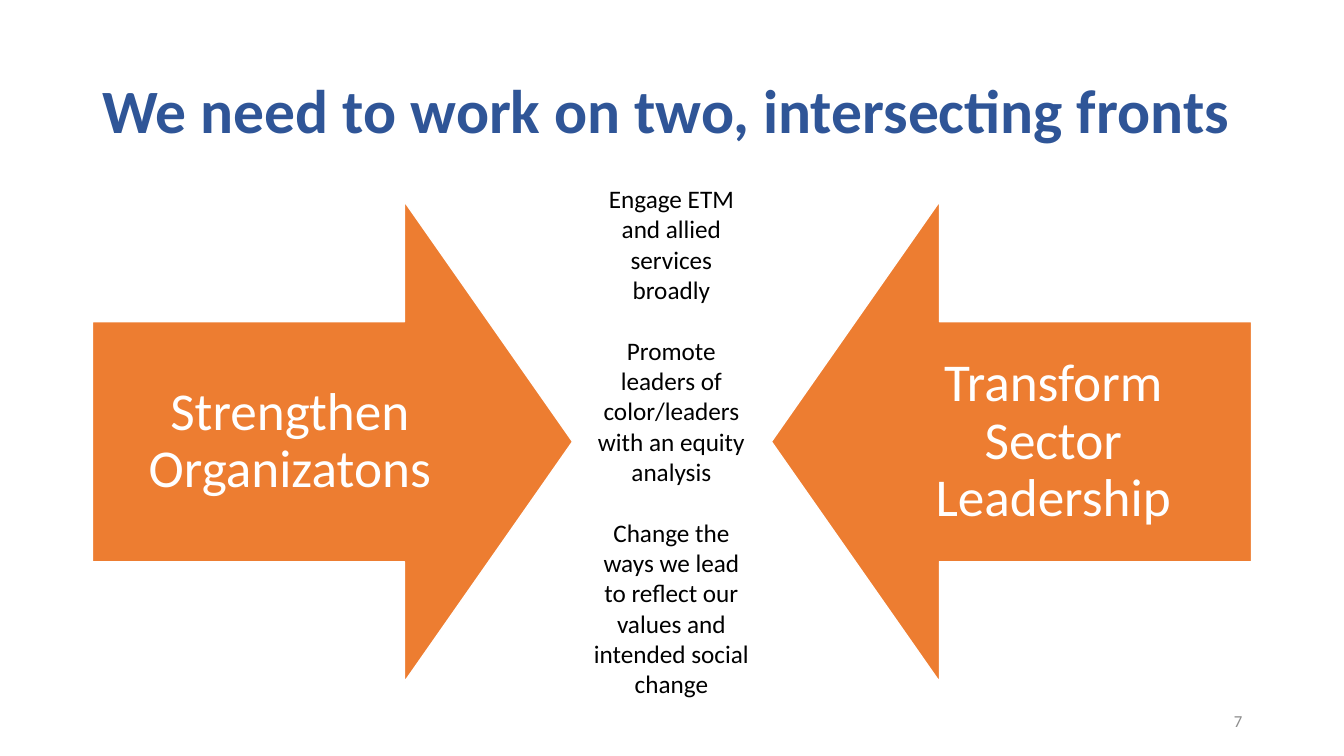
from pptx import Presentation
from pptx.dml.color import RGBColor
from pptx.enum.shapes import MSO_SHAPE as Shape
from pptx.enum.text import MSO_ANCHOR as Anchor, MSO_AUTO_SIZE as AutoSize, PP_ALIGN as Align
from pptx.util import Cm, Pt

FONT = "Calibri"
ARROW_SIDE, ARROW_TOP = 12.1, 5.08
LABEL_TOP, LABEL_WIDTH, LABEL_HEIGHT = 8.11, 9.95, 6.05
GOALS = [
    "Engage ETM and allied services broadly",
    "Promote leaders of color/leaders with an equity analysis",
    "Change the ways we lead to reflect our values and intended social change",
]


def color(value):
    """Turn a hex string into a colour."""
    return RGBColor.from_string(value)


def add_text(s, box, texts, size, fill, align=Align.CENTER, anchor=Anchor.MIDDLE,
             bold=False, spacing=None, gap=0, inset=None):
    """Add a wrapped text box with one paragraph per text."""
    sp = s.shapes.add_textbox(*map(Cm, box))
    tf = sp.text_frame
    tf.word_wrap = True
    tf.vertical_anchor = anchor
    if inset is not None:
        tf.margin_left = tf.margin_right = tf.margin_top = tf.margin_bottom = Cm(inset)
    for i, text in enumerate(texts):
        p = tf.add_paragraph() if i else tf.paragraphs[0]
        p.alignment = align
        if spacing:
            p.line_spacing = spacing
        if i:
            p.space_before = Pt(gap)
        r = p.add_run()
        r.text = text
        r.font.name, r.font.size, r.font.bold = FONT, Pt(size), bold
        r.font.color.rgb = color(fill)
    return sp


def add_front(s, arrow_left, label_left, rotation, text):
    """Add a large sideways arrow and its label."""
    sp = s.shapes.add_shape(Shape.DOWN_ARROW, Cm(arrow_left), Cm(ARROW_TOP),
                            Cm(ARROW_SIDE), Cm(ARROW_SIDE))
    sp.rotation = rotation
    sp.adjustments[0], sp.adjustments[1] = 0.5, 0.35
    sp.shadow.inherit = False
    sp.fill.solid()
    sp.fill.fore_color.rgb = color("ED7D31")
    sp.line.color.rgb = color("FFFFFF")
    sp.line.width = Pt(1)
    add_text(s, (label_left, LABEL_TOP, LABEL_WIDTH, LABEL_HEIGHT), [text], 38, "FFFFFF",
             spacing=0.9, inset=0.76)


def main():
    """Build the slide and save it."""
    prs = Presentation()
    prs.slide_width, prs.slide_height = Cm(33.87), Cm(19.05)
    s = prs.slides.add_slide(prs.slide_layouts[6])
    add_text(s, (2.33, 1.01, 29.21, 3.68), ["We need to work on two, intersecting fronts"],
             44, "2F5597", align=Align.LEFT, bold=True, spacing=0.9)
    add_text(s, (23.94, 17.66, 7.62, 1.01), ["7"], 12, "8C8C8C", align=Align.RIGHT)
    add_front(s, 2.33, 2.33, 270, "Strengthen Organizatons")
    add_front(s, 19.44, 21.57, 90, "Transform Sector Leadership")
    goals = add_text(s, (14.69, 4.5, 4.46, 13.43), GOALS, 18, "000000",
                     anchor=Anchor.TOP, gap=22)
    goals.text_frame.auto_size = AutoSize.SHAPE_TO_FIT_TEXT
    prs.save("out.pptx")


if __name__ == "__main__":
    main()
